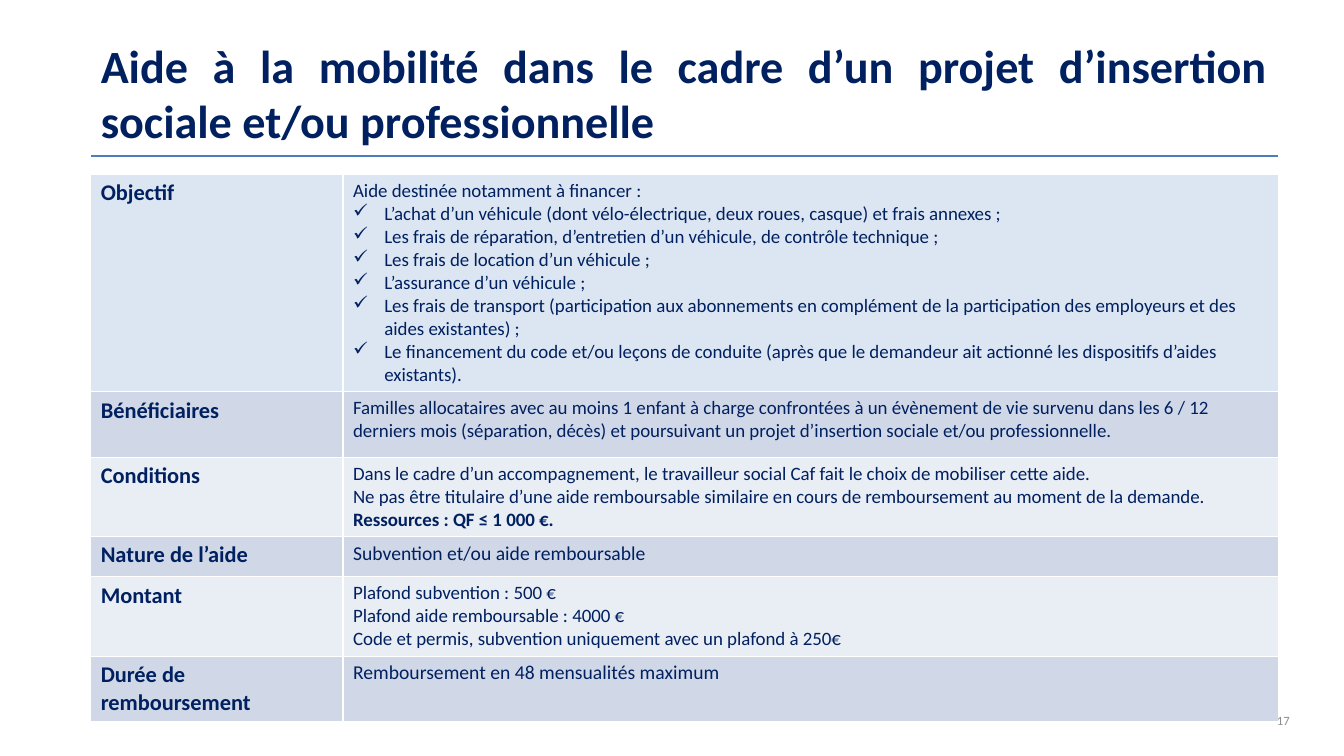
from dataclasses import dataclass

from lxml import etree
from pptx import Presentation
from pptx import util as u
from pptx.dml.color import RGBColor
from pptx.enum import shapes, text
from pptx.oxml.ns import qn

WIDTH, HEIGHT = u.Inches(13.33), u.Inches(7.5)


@dataclass(frozen=True)
class Theme:
    """Colours, font and type sizes of the slide."""
    font: str = "Calibri"
    ink: str = "002060"
    rule: str = "4B7EBC"
    muted: str = "8C8C8C"
    first: str = "DCE6F2"
    bands: tuple = ("E9EDF4", "D0D8E8")
    title: float = 33
    label: float = 16
    body: float = 13.5
    single: float = 14
    number: float = 9


THEME = Theme()
TITLE = "Aide à la mobilité dans le cadre d’un projet d’insertion sociale et/ou professionnelle"
ROWS = [
    ("Objectif", 2.15, [
        "Aide destinée notamment à financer :",
        "✓L’achat d’un véhicule (dont vélo-électrique, deux roues, casque) et frais annexes ;",
        "✓Les frais de réparation, d’entretien d’un véhicule, de contrôle technique ;",
        "✓Les frais de location d’un véhicule ;",
        "✓L’assurance d’un véhicule ;",
        "✓Les frais de transport (participation aux abonnements en complément de la "
        "participation des employeurs et des aides existantes) ;",
        "✓Le financement du code et/ou leçons de conduite (après que le demandeur ait "
        "actionné les dispositifs d’aides existants).",
    ]),
    ("Bénéficiaires", 0.65, [
        "Familles allocataires avec au moins 1 enfant à charge confrontées à un évènement de vie "
        "survenu dans les 6 / 12 derniers mois (séparation, décès) et poursuivant un projet "
        "d’insertion sociale et/ou professionnelle.",
    ]),
    ("Conditions", 0.78, [
        "Dans le cadre d’un accompagnement, le travailleur social Caf fait le choix de mobiliser "
        "cette aide.",
        "Ne pas être titulaire d’une aide remboursable similaire en cours de remboursement au "
        "moment de la demande.",
        "Ressources : QF ≤ 1 000 €.",
    ]),
    ("Nature de l’aide", 0.4, ["Subvention et/ou aide remboursable"]),
    ("Montant", 0.79, [
        "Plafond subvention : 500 €",
        "Plafond aide remboursable : 4000 €",
        "Code et permis, subvention uniquement avec un plafond à 250€",
    ]),
    ("Durée de remboursement", 0.64, ["Remboursement en 48 mensualités maximum"]),
]


def share(left, top, width, height):
    """Turn percentages of the slide into a box of lengths."""
    return (int(WIDTH * left / 100), int(HEIGHT * top / 100),
            int(WIDTH * width / 100), int(HEIGHT * height / 100))


def write(p, words, size, color=THEME.ink, bold=False, align=None):
    """Add formatted words to a paragraph."""
    r = p.add_run()
    r.text = words
    r.font.name, r.font.size, r.font.bold = THEME.font, u.Pt(size), bold
    r.font.color.rgb = RGBColor.from_string(color)
    if align is not None:
        p.alignment = align


def add_check(p):
    """Give a paragraph a hanging check mark."""
    pPr = p._p.get_or_add_pPr()
    indent = u.Inches(0.31)
    pPr.set("marL", str(indent))
    pPr.set("indent", str(-indent))
    etree.SubElement(pPr, qn("a:buChar")).set("char", "✓")


def add_title(slide, box):
    """Place the title and the rule under it."""
    sp = slide.shapes.title
    sp.left, sp.top, sp.width, sp.height = left, top, width, height = box
    tf = sp.text_frame
    tf.word_wrap, tf.auto_size = True, text.MSO_AUTO_SIZE.NONE
    tf.vertical_anchor = text.MSO_ANCHOR.MIDDLE
    write(tf.paragraphs[0], TITLE, THEME.title, bold=True, align=text.PP_ALIGN.JUSTIFY)
    base = top + height
    line = slide.shapes.add_connector(shapes.MSO_CONNECTOR.STRAIGHT, left, base, left + width, base)
    line.line.color.rgb = RGBColor.from_string(THEME.rule)
    line.line.width = u.Pt(1.5)
    etree.SubElement(line._element.spPr, qn("a:effectLst"))


def fill_cell(cell, lines, size, color, bold=False):
    """Write lines in a cell, with check marks and a bold resource line."""
    cell.fill.solid()
    cell.fill.fore_color.rgb = RGBColor.from_string(color)
    tf = cell.text_frame
    for i, line in enumerate(lines):
        p = tf.add_paragraph() if i else tf.paragraphs[0]
        if line.startswith("✓"):
            add_check(p)
        write(p, line.lstrip("✓"), size, bold=bold or line.startswith("Ressources"))


def add_aid_table(slide, box):
    """Place the table of labels and details."""
    table = slide.shapes.add_table(len(ROWS), 2, *box).table
    table.horz_banding = False
    label_width = int(box[2] * 0.2125)
    table.columns[0].width, table.columns[1].width = label_width, box[2] - label_width
    total = sum(height for _, height, _ in ROWS)
    for i, (label, height, lines) in enumerate(ROWS):
        table.rows[i].height = int(box[3] * height / total)
        color = THEME.bands[i % 2] if i else THEME.first
        size = THEME.single if len(lines[0]) < 40 and len(lines) == 1 else THEME.body
        fill_cell(table.cell(i, 0), [label], THEME.label, color, bold=True)
        fill_cell(table.cell(i, 1), lines, size, color)


def add_number(slide, box):
    """Place the slide number."""
    tf = slide.shapes.add_textbox(*box).text_frame
    tf.word_wrap = True
    tf.vertical_anchor = text.MSO_ANCHOR.MIDDLE
    write(tf.paragraphs[0], "17", THEME.number, THEME.muted, align=text.PP_ALIGN.RIGHT)


def main():
    """Build and save the slide."""
    prs = Presentation()
    prs.slide_width, prs.slide_height = WIDTH, HEIGHT
    slide = prs.slides.add_slide(prs.slide_layouts[5])
    add_title(slide, share(6.75, 3.87, 88.35, 16.8))
    add_aid_table(slide, share(6.75, 23.07, 88.35, 72.13))
    add_number(slide, share(73.37, 92.67, 23.33, 5.33))
    prs.save("out.pptx")


if __name__ == "__main__":
    main()
